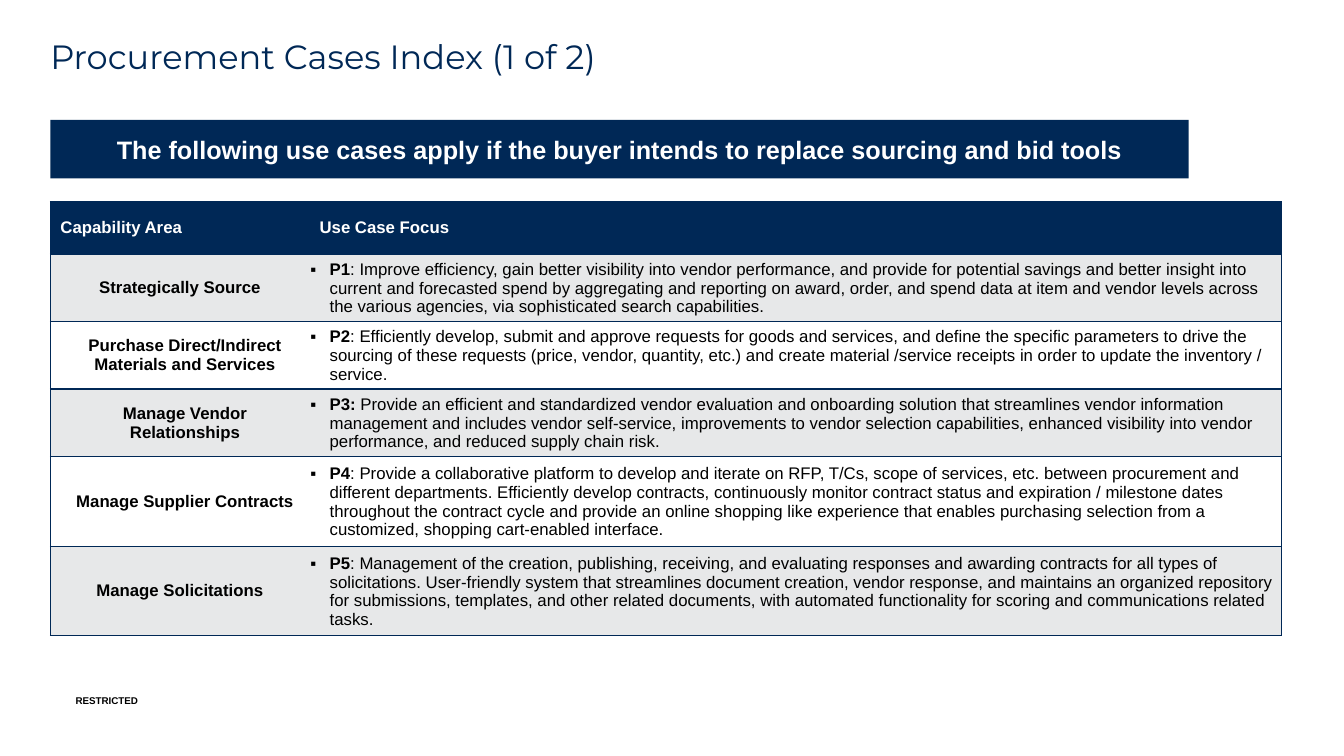
from lxml.etree import SubElement
from pptx import Presentation
from pptx.dml.color import RGBColor
from pptx.enum.shapes import MSO_SHAPE
from pptx.enum.text import MSO_ANCHOR, PP_ALIGN
from pptx.oxml import parse_xml
from pptx.oxml.ns import nsdecls, qn
from pptx.util import Inches, Pt

COLORS = {"navy": "002856", "grey": "E7E8E9", "white": "FFFFFF", "black": "000000"}

# Capability, left indent, case label, case text, row height
CASES = [
    ("Strategically Source", 0, "P1",
     ": Improve efficiency, gain better visibility into vendor performance, and provide for "
     "potential savings and better insight into current and forecasted spend by aggregating and "
     "reporting on award, order, and spend data at item and vendor levels across the various "
     "agencies, via sophisticated search capabilities.", 0.67),
    ("Purchase Direct/Indirect Materials and Services", 0.1, "P2",
     ": Efficiently develop, submit and approve requests for goods and services, and define the "
     "specific parameters to drive the sourcing of these requests (price, vendor, quantity, etc.) "
     "and create material /service receipts in order to update the inventory / service.", 0.67),
    ("Manage Vendor Relationships", 0.1, "P3: ",
     "Provide an efficient and standardized vendor evaluation and onboarding solution that "
     "streamlines vendor information management and includes vendor self-service, improvements to "
     "vendor selection capabilities, enhanced visibility into vendor performance, and reduced "
     "supply chain risk.", 0.67),
    ("Manage Supplier Contracts", 0.1, "P4",
     ": Provide a collaborative platform to develop and iterate on RFP, T/Cs, scope of services, "
     "etc. between procurement and different departments. Efficiently develop contracts, "
     "continuously monitor contract status and expiration / milestone dates throughout the "
     "contract cycle and provide an online shopping like experience that enables purchasing "
     "selection from a customized, shopping cart-enabled interface.", 0.89),
    ("Manage Solicitations", 0, "P5",
     ": Management of the creation, publishing, receiving, and evaluating responses and awarding "
     "contracts for all types of solicitations. User-friendly system that streamlines document "
     "creation, vendor response, and maintains an organized repository for submissions, "
     "templates, and other related documents, with automated functionality for scoring and "
     "communications related tasks.", 0.89),
]


class SlideBuilder:
    def __init__(self, slide):
        self.s = slide
        self.font = {"name": "Arial", "size": 12, "bold": True, "color": "black"}

    def rgb(self, color):
        return RGBColor.from_string(COLORS[color])

    def run(self, p, text, **style):
        r = p.add_run()
        r.text = text
        fmt = {**self.font, **style}
        r.font.color.rgb = self.rgb(fmt.pop("color"))
        fmt["size"] = Pt(fmt["size"])
        for key, value in fmt.items():
            setattr(r.font, key, value)

    def frame(self, tf, **settings):
        for key, value in {"word_wrap": True, **settings}.items():
            setattr(tf, key, value)
        return tf.paragraphs[0]

    def text(self, box, text, anchor=MSO_ANCHOR.TOP, line_spacing=1.0, **style):
        sp = self.s.shapes.add_textbox(*map(Inches, box))
        p = self.frame(sp.text_frame, vertical_anchor=anchor, margin_left=0,
                       margin_top=0, margin_right=0, margin_bottom=0)
        p.line_spacing = line_spacing
        self.run(p, text, **style)

    def banner(self, box, text, **style):
        sp = self.s.shapes.add_shape(MSO_SHAPE.RECTANGLE, *map(Inches, box))
        sp.shadow.inherit = False
        sp.fill.solid()
        sp.fill.fore_color.rgb = self.rgb("navy")
        sp.line.fill.background()
        p = self.frame(sp.text_frame, vertical_anchor=MSO_ANCHOR.MIDDLE)
        p.alignment = PP_ALIGN.CENTER
        self.run(p, text, **style)

    def table(self, box, widths, heights):
        shape = self.s.shapes.add_table(len(heights), len(widths), *map(Inches, box))
        table = shape.table
        table.first_row = table.horz_banding = False
        for column, width in zip(table.columns, widths):
            column.width = Inches(width)
        for row, height in zip(table.rows, heights):
            row.height = Inches(height)
        return table

    def cell(self, cell, fill, sides):
        cell.fill.solid()
        cell.fill.fore_color.rgb = self.rgb(fill)
        cell.vertical_anchor = MSO_ANCHOR.MIDDLE
        # Border lines come before the fill
        for i, side in enumerate("LRTB"):
            paint = (f'<a:solidFill><a:srgbClr val="{COLORS["navy"]}"/></a:solidFill>'
                     if side in sides else "<a:noFill/>")
            line = f'<a:ln{side} {nsdecls("a")} w="{Pt(1)}">{paint}</a:ln{side}>'
            cell._tc.get_or_add_tcPr().insert(i, parse_xml(line))
        return cell.text_frame.paragraphs[0]

    def indent(self, p, left, bullet=None):
        pPr = p._p.get_or_add_pPr()
        pPr.set("marL", str(Inches(left)))
        if bullet:
            pPr.set("indent", str(-Inches(left)))
            SubElement(pPr, qn("a:buFont")).set("typeface", "Arial")
            SubElement(pPr, qn("a:buChar")).set("char", bullet)


def main():
    prs = Presentation()
    prs.slide_width, prs.slide_height = Inches(13.33), Inches(7.5)
    b = SlideBuilder(prs.slides.add_slide(prs.slide_layouts[6]))

    # Footer
    b.text((0.75, 6.89, 4.66, 0.12), "RESTRICTED", MSO_ANCHOR.BOTTOM, size=7)

    # Index table
    heights = [0.52] + [case[-1] for case in CASES]
    table = b.table((0.5, 2, 12.21, sum(heights)), (2.57, 9.64), heights)
    for col, (heading, sides) in enumerate([("Capability Area", "LTB"), ("Use Case Focus", "RTB")]):
        b.run(b.cell(table.cell(0, col), "navy", sides), heading, color="white")
    for row, (area, left, label, focus, _) in enumerate(CASES, 1):
        fill = "grey" if row % 2 else "white"
        p = b.cell(table.cell(row, 0), fill, "LTB")
        p.alignment = PP_ALIGN.CENTER
        b.indent(p, left)
        b.run(p, area)

        cell = table.cell(row, 1)
        p = b.cell(cell, fill, "RTB")
        for side, margin in {"left": 0.01, "top": 0.01, "right": 0.01, "bottom": 0}.items():
            setattr(cell, f"margin_{side}", Inches(margin))
        b.indent(p, 0.19, "▪")
        b.run(p, label)
        b.run(p, focus, bold=False)

    # Banner and title
    b.banner((0.5, 1.19, 11.29, 0.58),
             "The following use cases apply if the buyer intends to replace sourcing and bid tools",
             size=18, color="white")
    b.text((0.5, 0.4, 12.33, 0.48), "Procurement Cases Index (1 of 2)", line_spacing=0.9,
           name="Montserrat", size=24, bold=False, color="navy")

    prs.save("out.pptx")


if __name__ == "__main__":
    main()
